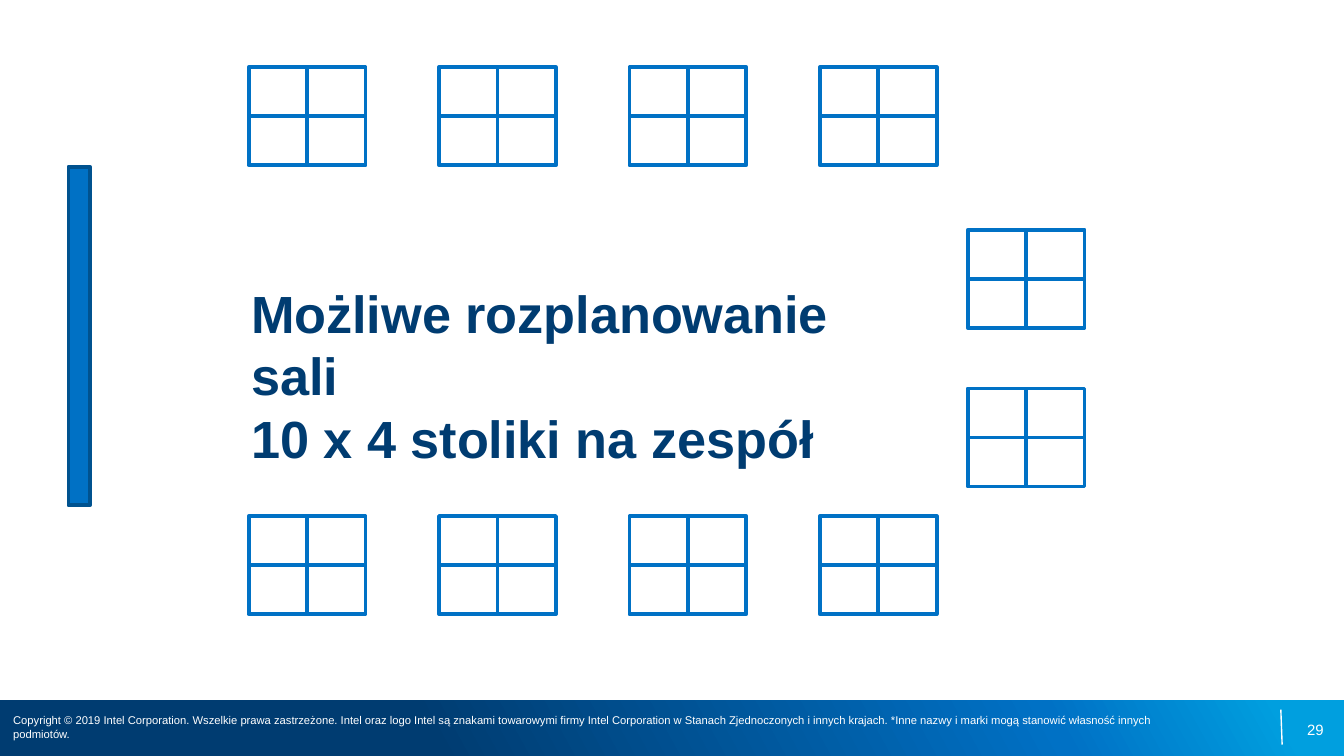
from lxml import etree
from pptx import Presentation
from pptx.dml.color import RGBColor
from pptx.enum.shapes import MSO_CONNECTOR, MSO_SHAPE
from pptx.enum.text import MSO_ANCHOR, PP_ALIGN
from pptx.oxml.ns import qn
from pptx.util import Inches, Pt

RECT = MSO_SHAPE.RECTANGLE
STRAIGHT = MSO_CONNECTOR.STRAIGHT
TOP, MIDDLE = MSO_ANCHOR.TOP, MSO_ANCHOR.MIDDLE
LEFT, RIGHT = PP_ALIGN.LEFT, PP_ALIGN.RIGHT

WHITE = RGBColor(0xFF, 0xFF, 0xFF)
NAVY = RGBColor(0x00, 0x3C, 0x71)
BLUE = RGBColor(0x00, 0x71, 0xC5)
DARK_BLUE = RGBColor(0x00, 0x52, 0x8F)
SKY = RGBColor(0x00, 0x9F, 0xDF)

SLIDE_W = 10
SLIDE_H = SLIDE_W * 9 / 16
FOOTER_STOPS = [(0, NAVY), (32, NAVY), (78, BLUE), (95, SKY), (100, SKY)]
FOOTER_ANGLE = 331
DESK_W, DESK_H = 0.87 / 2, 0.73 / 2
ROW_COUNT = 4
ROW_LEFT, ROW_LAST = 1.85, 6.1
ROW_PITCH = (ROW_LAST - ROW_LEFT) / (ROW_COUNT - 1)
ROW_TOPS = (0.5, 3.84)
SIDE_LEFT = 7.2
SIDE_TOPS = (1.71, 2.89)

TITLE = ["Możliwe rozplanowanie sali", "10 x 4 stoliki na zespół"]
COPYRIGHT = (
    "Copyright © 2019 Intel Corporation. Wszelkie prawa zastrzeżone. "
    "Intel oraz logo Intel są znakami towarowymi firmy Intel Corporation "
    "w Stanach Zjednoczonych i innych krajach. "
    "*Inne nazwy i marki mogą stanowić własność innych podmiotów."
)


def add_rect(shapes, x, y, w, h, fill=None, line=None):
    """Add a flat rectangle with an optional fill and a 2 pt outline."""
    s = shapes.add_shape(RECT, Inches(x), Inches(y), Inches(w), Inches(h))
    s.shadow.inherit = False
    if fill is not None:
        s.fill.solid()
        s.fill.fore_color.rgb = fill
    if line is None:
        s.line.fill.background()
    else:
        s.line.color.rgb = line
        s.line.width = Pt(2)
    return s


def add_text(shapes, x, y, w, h, lines, *, size, color, bold=False,
             align=LEFT, anchor=TOP, inset=(0, 0)):
    """Add a wrapped text box with one paragraph per line."""
    tf = shapes.add_textbox(Inches(x), Inches(y), Inches(w), Inches(h)).text_frame
    tf.word_wrap = True
    tf.vertical_anchor = anchor
    tf.margin_left = tf.margin_right = Inches(inset[0])
    tf.margin_top = tf.margin_bottom = Inches(inset[1])
    for i, text in enumerate(lines):
        p = tf.add_paragraph() if i else tf.paragraphs[0]
        p.alignment = align
        r = p.add_run()
        r.text = text
        r.font.name = "Arial"
        r.font.size = Pt(size)
        r.font.bold = bold
        r.font.color.rgb = color


def set_gradient(s, stops, angle):
    """Fill a shape with a linear gradient of any number of stops."""
    s.fill.gradient()
    grad = s.element.spPr.find(qn("a:gradFill"))
    gs_list = grad.find(qn("a:gsLst"))
    for gs in list(gs_list):
        gs_list.remove(gs)
    for percent, color in stops:
        gs = etree.SubElement(gs_list, qn("a:gs"), pos=str(percent * 1000))
        etree.SubElement(gs, qn("a:srgbClr"), val=str(color))
    grad.find(qn("a:lin")).set("ang", str(angle * 60000))


def add_line(shapes, x1, y1, x2, y2, color, width):
    """Add a straight line without a shadow."""
    c = shapes.add_connector(STRAIGHT, Inches(x1), Inches(y1), Inches(x2), Inches(y2))
    c.line.color.rgb = color
    c.line.width = Pt(width)
    etree.SubElement(c.element.spPr, qn("a:effectLst"))


def add_table_group(shapes, x, y):
    """Add a team's group of two by two desks."""
    group = shapes.add_group_shape()
    for row in range(2):
        for col in range(2):
            add_rect(group.shapes, x + col * DESK_W, y + row * DESK_H,
                     DESK_W, DESK_H, WHITE, BLUE)


def add_footer(shapes):
    """Add the gradient band, divider, page number and copyright line."""
    set_gradient(add_rect(shapes, 0, 5.21, SLIDE_W, 0.42), FOOTER_STOPS, FOOTER_ANGLE)
    add_line(shapes, 9.53, 5.28, 9.54, 5.54, WHITE, 0.75)
    add_text(shapes, 7.52, 5.28, 2.33, 0.3, ["29"], size=8, color=WHITE,
             align=RIGHT, anchor=MIDDLE)
    add_text(shapes, 0, 5.31, 8.86, 0.2, [COPYRIGHT], size=6, color=WHITE,
             anchor=MIDDLE, inset=(0.1, 0.05))


def main():
    """Build the room layout slide."""
    prs = Presentation()
    prs.slide_width, prs.slide_height = Inches(SLIDE_W), Inches(SLIDE_H)
    shapes = prs.slides.add_slide(prs.slide_layouts[6]).shapes
    add_footer(shapes)
    add_rect(shapes, 0, 0, SLIDE_W, 5.17, WHITE)
    add_text(shapes, 1.77, 1.99, 4.8, 1.18, TITLE, size=28, color=NAVY,
             bold=True, inset=(0.1, 0.1))
    add_rect(shapes, 0.51, 1.24, 0.16, 2.52, BLUE, DARK_BLUE)
    for y in ROW_TOPS:
        for i in range(ROW_COUNT):
            add_table_group(shapes, ROW_LEFT + i * ROW_PITCH, y)
    for y in SIDE_TOPS:
        add_table_group(shapes, SIDE_LEFT, y)
    prs.save("out.pptx")


if __name__ == "__main__":
    main()
